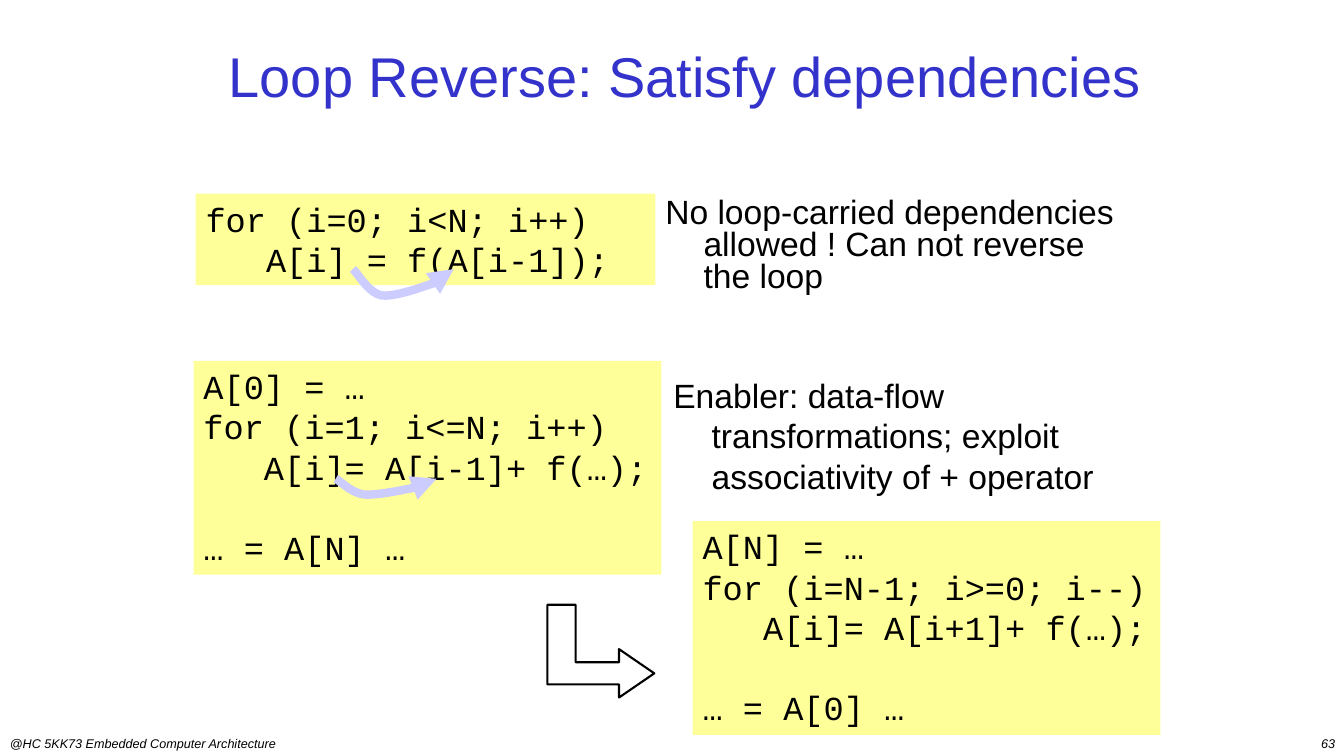
from lxml import etree
from pptx import Presentation
from pptx.dml.color import RGBColor
from pptx.enum.shapes import MSO_SHAPE
from pptx.enum.text import MSO_ANCHOR, PP_ALIGN
from pptx.oxml.ns import qn
from pptx.util import Inches, Pt

RECTANGLE = MSO_SHAPE.RECTANGLE
TOP, MIDDLE = MSO_ANCHOR.TOP, MSO_ANCHOR.MIDDLE
LEFT, RIGHT = PP_ALIGN.LEFT, PP_ALIGN.RIGHT

COLORS = {"title": "3333CC", "text": "000000", "code": "FFFF99",
          "dependency": "CCCCFF", "outline": "000000"}
CODE_LINE = 28.8  # points

# Cubic Bezier points of a dependency arrow, relative to its start
ARROW_CURVE = [(0, 0), (0.05, 0.04), (0.15, 0.23), (0.28, 0.26), (0.41, 0.28),
               (0.68, 0.18), (0.8, 0.14), (0.92, 0.09), (0.96, 0.03), (1, 0)]
CURVE_STEPS = 10


def color(name):
    return RGBColor.from_string(COLORS[name])


def write_text(shape, lines, font="Arial", size=24, fill="text", italic=False,
               align=LEFT, anchor=TOP, wrap=True):
    """Write one paragraph per line; an empty line becomes space before the next."""
    frame = shape.text_frame
    frame.word_wrap = wrap
    frame.vertical_anchor = anchor
    paragraph, gap = frame.paragraphs[0], 0
    for line in lines:
        if not line:
            gap += CODE_LINE
            continue
        if paragraph.runs:
            paragraph = frame.add_paragraph()
        paragraph.alignment = align
        if gap:
            paragraph.space_before = Pt(gap)
            gap = 0
        run = paragraph.add_run()
        run.text = line
        run.font.name, run.font.size = font, Pt(size)
        run.font.italic = italic
        run.font.color.rgb = color(fill)


def add_text(slide, box, text, **text_format):
    shape = slide.shapes.add_textbox(*map(Inches, box))
    write_text(shape, [text], **text_format)
    return shape


def add_remark(slide, box, text, line_spacing=None):
    """Text with a hanging indent and 20 % space before."""
    shape = add_text(slide, box, text)
    paragraph = shape.text_frame.paragraphs[0]
    paragraph.line_spacing = line_spacing
    properties = paragraph._p.get_or_add_pPr()
    properties.set("marL", str(Inches(0.38)))
    properties.set("indent", str(Inches(-0.38)))
    before = etree.SubElement(properties, qn("a:spcBef"))
    etree.SubElement(before, qn("a:spcPct"), val="20000")


def add_code(slide, box, lines, wrap=False):
    shape = slide.shapes.add_shape(RECTANGLE, *map(Inches, box))
    shape.shadow.inherit = False
    shape.fill.solid()
    shape.fill.fore_color.rgb = color("code")
    shape.line.fill.background()
    write_text(shape, lines, font="Courier New", wrap=wrap)


def add_outline(slide, points, line_color, width, close):
    points = [(Inches(x), Inches(y)) for x, y in points]
    builder = slide.shapes.build_freeform(*points[0])
    builder.add_line_segments(points[1:], close=close)
    shape = builder.convert_to_shape()
    shape.shadow.inherit = False
    shape.fill.background()
    shape.line.color.rgb = color(line_color)
    shape.line.width = Pt(width)
    return shape


def bezier_point(controls, t):
    weights = ((1 - t) ** 3, 3 * t * (1 - t) ** 2, 3 * t ** 2 * (1 - t), t ** 3)
    return tuple(sum(w * c for w, c in zip(weights, axis))
                 for axis in zip(*controls))


def add_dependency(slide, left, top, height_scale=1):
    """Curved arrow between two array accesses."""
    controls = [(left + x, top + y * height_scale) for x, y in ARROW_CURVE]
    points = [controls[0]]
    for start in range(0, len(controls) - 1, 3):
        points += [bezier_point(controls[start:start + 4], step / CURVE_STEPS)
                   for step in range(1, CURVE_STEPS + 1)]
    shape = add_outline(slide, points, "dependency", 6, close=False)
    etree.SubElement(shape.line._get_or_add_ln(), qn("a:tailEnd"), type="triangle")


def add_bent_arrow(slide, left, top):
    """Outlined arrow going down, then right."""
    offsets = [(1.06, 0.69), (0.71, 0.45), (0.71, 0.58), (0.28, 0.58), (0.28, 0.01),
               (0, 0.01), (0, 0.8), (0.71, 0.8), (0.71, 0.93)]
    points = [(left + x, top + y) for x, y in offsets]
    add_outline(slide, points, "outline", 1.5, close=True)


def add_frame(slide):
    """Footer, page number and title."""
    add_text(slide, (0, 7.25, 4, 0.25), "@HC 5KK73 Embedded Computer Architecture",
             size=9, italic=True)
    add_text(slide, (10.56, 7.25, 2.78, 0.25), "63", size=9, italic=True, align=RIGHT)
    add_text(slide, (2.17, 0.33, 9.5, 0.83), "Loop Reverse: Satisfy dependencies",
             size=40, fill="title", anchor=MIDDLE)


def add_blocked_loop(slide, left, top):
    """Loop that cannot be reversed."""
    add_remark(slide, (left + 4.56, top, 4.67, 1.17),
               "No loop-carried dependencies allowed ! Can not reverse the loop",
               line_spacing=0.8)
    add_code(slide, (left, top, 4.56, 0.91),
             ["for (i=0; i<N; i++)", "   A[i] = f(A[i-1]);"], wrap=True)
    add_dependency(slide, left + 1.56, top + 0.75)


def add_reversed_loop(slide, left, top):
    """Loop that is reversed after a transformation."""
    add_remark(slide, (left + 4.66, top + 0.09, 4.92, 1.3),
               "Enabler: data-flow transformations; exploit associativity of + operator")
    add_code(slide, (left, top, 4.64, 2.12),
             ["A[0] = …", "for (i=1; i<=N; i++)", "   A[i]= A[i-1]+ f(…);",
              "", "… = A[N] …"])
    add_dependency(slide, left + 1.41, top + 1.17, height_scale=0.6)
    add_code(slide, (left + 4.95, top + 1.59, 4.64, 2.12),
             ["A[N] = …", "for (i=N-1; i>=0; i--)", "   A[i]= A[i+1]+ f(…);",
              "", "… = A[0] …"])
    add_bent_arrow(slide, left + 3.51, top + 2.41)


def main():
    presentation = Presentation()
    presentation.slide_width, presentation.slide_height = Inches(13.33), Inches(7.5)
    slide = presentation.slides.add_slide(presentation.slide_layouts[6])
    add_frame(slide)
    add_blocked_loop(slide, 1.94, 1.92)
    add_reversed_loop(slide, 1.92, 3.58)
    presentation.save("out.pptx")


if __name__ == "__main__":
    main()
